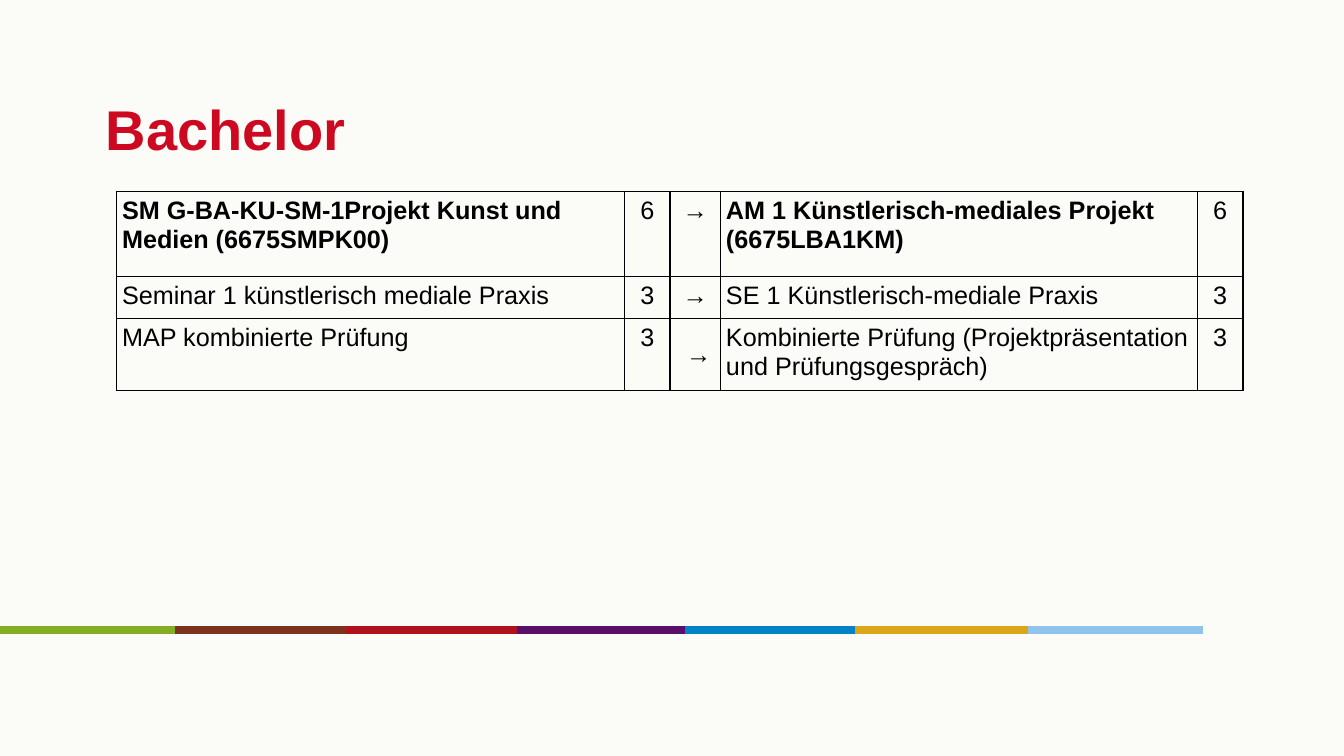
from dataclasses import dataclass

import pptx
import pptx.dml.color
import pptx.enum.shapes
import pptx.enum.text
import pptx.oxml
import pptx.oxml.ns
import pptx.util

Pt = pptx.util.Pt
Align = pptx.enum.text.PP_ALIGN
Anchor = pptx.enum.text.MSO_ANCHOR

BLACK = "000000"
RED = "CD0921"
LINE_Y = 450
LINE_LEN = 124.7


@dataclass
class Stripe:
    left: float
    color: str


@dataclass
class Row:
    height: float
    old: str
    new: str
    points: str
    bold: bool = False
    anchor: Anchor = Anchor.TOP
    shift: float = 0  # extra left margin of the arrow


STRIPES = [
    Stripe(0, "83AF23"),
    Stripe(125.3, "7D321D"),
    Stripe(247, "AF111D"),
    Stripe(369.4, "590F68"),
    Stripe(489.6, "0082C6"),
    Stripe(610.6, "DBA619"),
    Stripe(734.6, "91C4EA"),
]
WIDTHS = [363, 32.4, 36, 340.7, 32.6]
ROWS = [
    Row(60.5, "SM G-BA-KU-SM-1Projekt Kunst und Medien (6675SMPK00)",
        "AM 1 Künstlerisch-mediales Projekt (6675LBA1KM)", "6", bold=True),
    Row(30.2, "Seminar 1 künstlerisch mediale Praxis",
        "SE 1 Künstlerisch-mediale Praxis", "3"),
    Row(48.6, "MAP kombinierte Prüfung",
        "Kombinierte Prüfung (Projektpräsentation und Prüfungsgespräch)",
        "3", anchor=Anchor.MIDDLE, shift=5),
]


def rgb(code: str) -> pptx.dml.color.RGBColor:
    return pptx.dml.color.RGBColor.from_string(code)


def style(frame, size: float, color: str, bold: bool) -> None:
    for run in frame.paragraphs[0].runs:
        run.font.name = "Arial"
        run.font.size = Pt(size)
        run.font.bold = bold
        run.font.color.rgb = rgb(color)


def draw_stripe(slide, stripe: Stripe) -> None:
    line = slide.shapes.add_connector(
        pptx.enum.shapes.MSO_CONNECTOR.STRAIGHT, Pt(stripe.left), Pt(LINE_Y),
        Pt(stripe.left + LINE_LEN), Pt(LINE_Y))
    line.line.color.rgb = rgb(stripe.color)
    line.line.width = Pt(5.5)
    props = line._element.spPr
    props.append(props.makeelement(pptx.oxml.ns.qn("a:effectLst"), {}))


def draw_title(slide, text: str) -> None:
    box = slide.shapes.add_textbox(Pt(72), Pt(46.8), Pt(816), Pt(90))
    frame = box.text_frame
    frame.word_wrap = True
    frame.vertical_anchor = Anchor.MIDDLE
    frame.margin_left = frame.margin_right = Pt(3.6)
    frame.margin_top = frame.margin_bottom = Pt(3.6)
    frame.text = text
    style(frame, 40, RED, True)


def add_edges(cell) -> None:
    """Draw a thin black border on all four sides."""
    props = cell._tc.get_or_add_tcPr()
    for side in ("lnL", "lnR", "lnT", "lnB"):
        props.append(pptx.oxml.parse_xml(
            f'<a:{side} {pptx.oxml.ns.nsdecls("a")} w="{Pt(1)}">'
            f'<a:solidFill><a:srgbClr val="{BLACK}"/></a:solidFill>'
            f'</a:{side}>'))


def fill_cell(cell, text: str, bold: bool, align: Align) -> None:
    add_edges(cell)
    cell.fill.background()
    cell.margin_left = cell.margin_right = Pt(4)
    cell.margin_top = cell.margin_bottom = Pt(4)
    cell.text_frame.text = text
    cell.text_frame.paragraphs[0].alignment = align
    style(cell.text_frame, 18, BLACK, bold)


def draw_table(slide) -> None:
    high = sum(row.height for row in ROWS)
    table = slide.shapes.add_table(
        len(ROWS), len(WIDTHS), Pt(83.2), Pt(136.8),
        Pt(sum(WIDTHS)), Pt(high)).table
    table.first_row = False
    table.horz_banding = False
    for col, width in zip(table.columns, WIDTHS):
        col.width = Pt(width)
    for r, row in enumerate(ROWS):
        table.rows[r].height = Pt(row.height)
        texts = [row.old, row.points, "→", row.new, row.points]
        for c, text in enumerate(texts):
            wide = c in (0, 3)
            fill_cell(table.cell(r, c), text, wide and row.bold,
                      Align.LEFT if wide else Align.CENTER)
        arrow = table.cell(r, 2)
        arrow.vertical_anchor = row.anchor
        arrow.margin_left = Pt(4 + row.shift)


def main() -> None:
    deck = pptx.Presentation()
    deck.slide_width = Pt(960)
    deck.slide_height = Pt(540)
    slide = deck.slides.add_slide(deck.slide_layouts[6])
    slide.background.fill.solid()
    slide.background.fill.fore_color.rgb = rgb("FBFCF8")
    for stripe in STRIPES:
        draw_stripe(slide, stripe)
    draw_title(slide, "Bachelor")
    draw_table(slide)
    deck.save("out.pptx")


if __name__ == "__main__":
    main()
